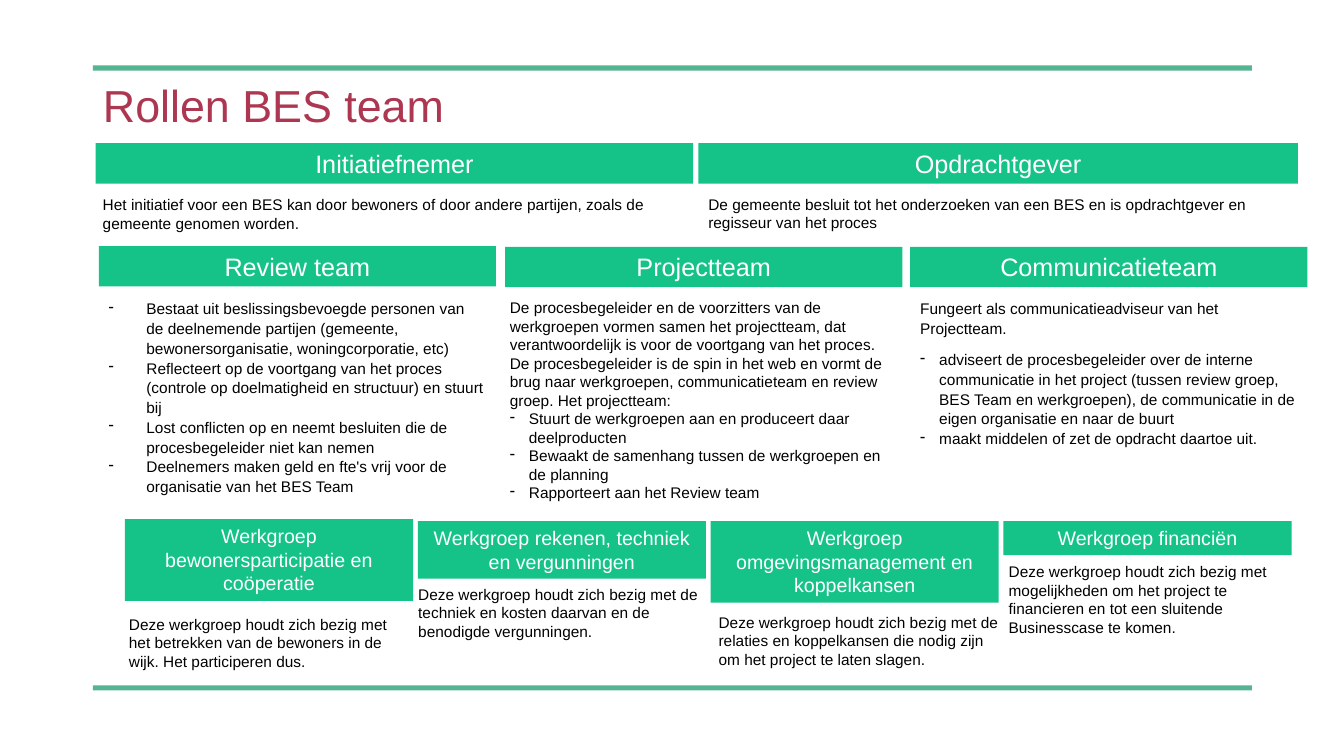
import pptx
import pptx.util
import pptx.dml.color
import pptx.enum.shapes
import pptx.enum.text
import pptx.oxml.ns
from lxml import etree

Cm = pptx.util.Cm
Pt = pptx.util.Pt
ALIGN = pptx.enum.text.PP_ALIGN
ANCHOR = pptx.enum.text.MSO_ANCHOR
FONT = "Arial"
COLORS = {"bar": "55B593", "title": "AD3651", "head": "15C389",
          "white": "FFFFFF", "text": "000000"}

# Top row: head, left, width, text left, text top, text
PARTIES = [
    ("Initiatiefnemer", 2.41, 15.06, 2.34, 4.8,
     "Het initiatief voor een BES kan door bewoners of door andere partijen, "
     "zoals de gemeente genomen worden."),
    ("Opdrachtgever", 17.6, 15.11, 17.6, 4.78,
     "De gemeente besluit tot het onderzoeken van een BES en is opdrachtgever "
     "en regisseur van het proces"),
]

# Middle row: head, left, top, text box, intro, duties, indent, line spacing
TEAMS = [
    ("Review team", 2.49, 6.2, (2.49, 7.39, 10.01, 5.26), None, [
        "Bestaat uit beslissingsbevoegde personen van de deelnemende partijen "
        "(gemeente, bewonersorganisatie, woningcorporatie, etc)",
        "Reflecteert op de voortgang van het proces (controle op doelmatigheid "
        "en structuur) en stuurt bij",
        "Lost conflicten op en neemt besluiten die de procesbegeleider niet "
        "kan nemen",
        "Deelnemers maken geld en fte's vrij voor de organisatie van het "
        "BES Team"], 0.95, 1.07),
    ("Projectteam", 12.73, 6.22, (12.6, 7.39, 10.26, 5.44),
     "De procesbegeleider en de voorzitters van de werkgroepen vormen samen "
     "het projectteam, dat verantwoordelijk is voor de voortgang van het "
     "proces. De procesbegeleider is de spin in het web en vormt de brug naar "
     "werkgroepen, communicatieteam en review groep. Het projectteam:", [
         "Stuurt de werkgroepen aan en produceert daar deelproducten",
         "Bewaakt de samenhang tussen de werkgroepen en de planning",
         "Rapporteert aan het Review team"], 0.48, 1.0),
    ("Communicatieteam", 22.94, 6.22, (22.94, 7.39, 10.01, 3.53),
     "Fungeert als communicatieadviseur van het Projectteam.", [
         "adviseert de procesbegeleider over de interne communicatie in het "
         "project (tussen review groep, BES Team en werkgroepen), de "
         "communicatie in de eigen organisatie en naar de buurt",
         "maakt middelen of zet de opdracht daartoe uit."], 0.48, 1.07),
]

# Bottom row: head, top, height, text left, text top, text
GROUPS = [
    ("Werkgroep bewonersparticipatie en coöperatie", 13.08, 2.06, 3.0, 15.37,
     "Deze werkgroep houdt zich bezig met het betrekken van de bewoners in de "
     "wijk. Het participeren dus."),
    ("Werkgroep rekenen, techniek en vergunningen", 13.13, 1.45, 10.29, 14.61,
     "Deze werkgroep houdt zich bezig met de techniek en kosten daarvan en de "
     "benodigde vergunningen."),
    ("Werkgroep omgevingsmanagement en koppelkansen", 13.13, 2.06, 17.86, 15.32,
     "Deze werkgroep houdt zich bezig met de relaties en koppelkansen die "
     "nodig zijn om het project te laten slagen."),
    ("Werkgroep financiën", 13.13, 0.86, 25.17, 14.05,
     "Deze werkgroep houdt zich bezig met mogelijkheden om het project te "
     "financieren en tot een sluitende Businesscase te komen."),
]


def paint(name):
    return pptx.dml.color.RGBColor.from_string(COLORS[name])


def style(para, size, color):
    for run in para.runs:
        run.font.name = FONT
        run.font.size = Pt(size)
        run.font.color.rgb = paint(color)


def add_rect(slide, box, color):
    kind = pptx.enum.shapes.MSO_SHAPE.RECTANGLE
    rect = slide.shapes.add_shape(kind, *map(Cm, box))
    rect.shadow.inherit = False
    rect.fill.solid()
    rect.fill.fore_color.rgb = paint(color)
    rect.line.fill.background()
    return rect


def add_head(slide, text, box, size):
    frame = add_rect(slide, box, "head").text_frame
    frame.word_wrap = True
    frame.vertical_anchor = ANCHOR.TOP
    frame.text = text
    frame.paragraphs[0].alignment = ALIGN.CENTER
    style(frame.paragraphs[0], size, "white")


def add_dash(para, indent):
    props = para._p.get_or_add_pPr()
    props.set("marL", str(Cm(indent)))
    props.set("indent", str(-Cm(indent)))
    mark = etree.SubElement(props, pptx.oxml.ns.qn("a:buChar"))
    mark.set("char", "-")


def add_body(slide, box, intro, duties=(), indent=0.48, space=1.0):
    frame = slide.shapes.add_textbox(*map(Cm, box)).text_frame
    frame.word_wrap = True
    lines = ([intro] if intro else []) + list(duties)
    frame.text = "\n".join(lines)
    for para, line in zip(frame.paragraphs, lines):
        if space != 1.0:
            para.line_spacing = space
            if line == intro:
                para.space_after = Pt(8)
        if line != intro:
            add_dash(para, indent)
        style(para, 11, "text")


def add_title(slide, text):
    title = slide.shapes.title
    title.left, title.top, title.width, title.height = map(
        Cm, (2.34, 1.32, 29.21, 2.79))
    frame = title.text_frame
    frame.auto_size = pptx.enum.text.MSO_AUTO_SIZE.NONE
    frame.vertical_anchor = ANCHOR.MIDDLE
    frame.text = text
    para = frame.paragraphs[0]
    para.alignment = ALIGN.LEFT
    para.line_spacing = 0.9
    style(para, 32, "title")


def main():
    deck = pptx.Presentation()
    deck.slide_width = Cm(33.87)
    deck.slide_height = Cm(19.05)
    slide = deck.slides.add_slide(deck.slide_layouts[5])

    # Title between the bars
    for top in (1.65, 17.27):
        add_rect(slide, (2.34, top, 29.21, 0.13), "bar")
    add_title(slide, "Rollen BES team")

    # Parties
    for head, left, width, x, y, text in PARTIES:
        add_head(slide, head, (left, 3.61, width, 1.02), 18)
        add_body(slide, (x, y, 15.21, 1.19), text)

    # Teams
    for head, left, top, box, intro, duties, indent, space in TEAMS:
        add_head(slide, head, (left, top, 10.01, 1.02), 18)
        add_body(slide, box, intro, duties, indent, space)

    # Working groups
    for i, (head, top, height, x, y, text) in enumerate(GROUPS):
        add_head(slide, head, (3.15 + i * 7.38, top, 7.26, height), 14)
        add_body(slide, (x, y, 7.57, 1.68), text)

    deck.save("out.pptx")


if __name__ == "__main__":
    main()
